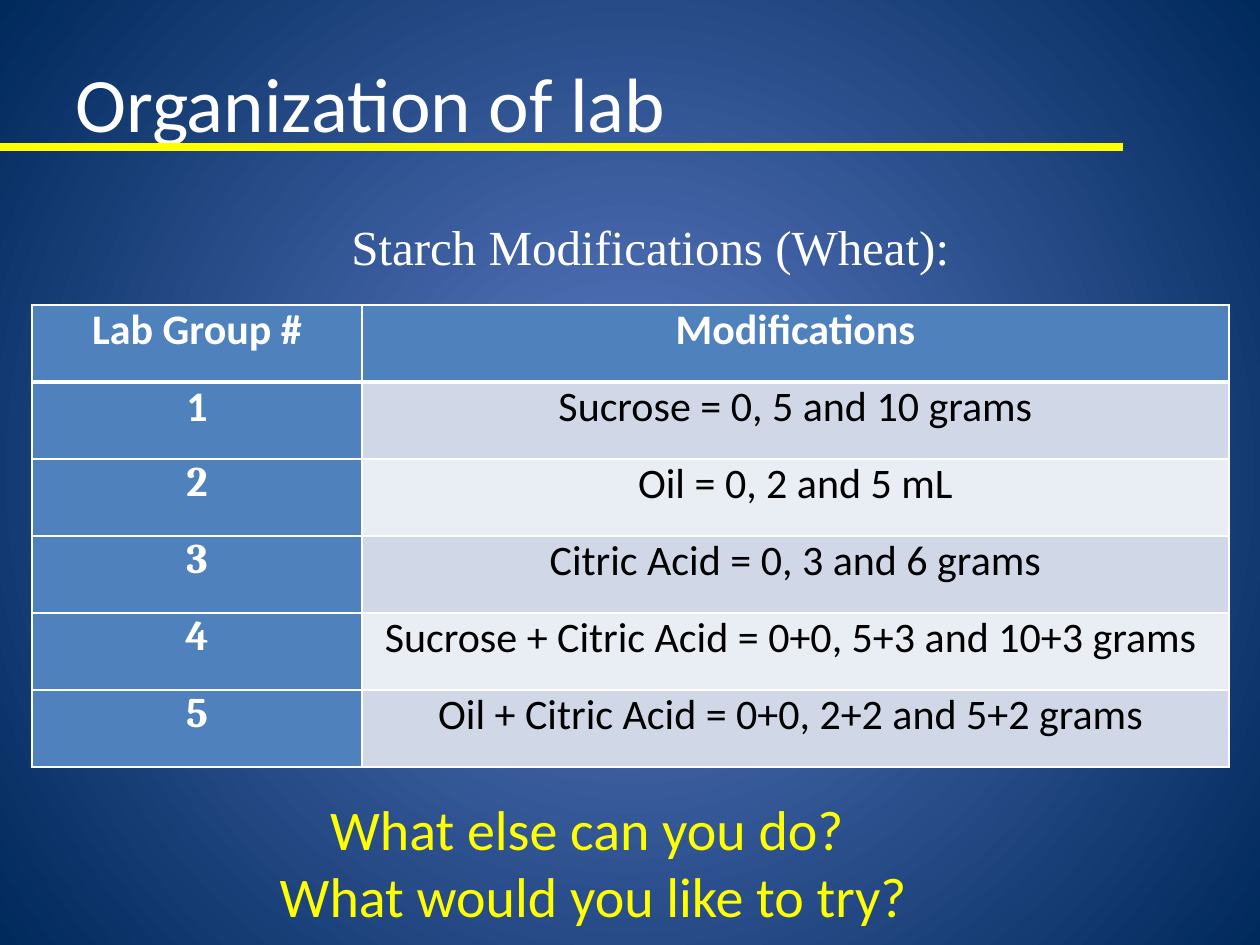
import pptx
import pptx.util
import pptx.dml.color
import pptx.enum.text
import pptx.enum.shapes
import pptx.oxml
import pptx.oxml.ns
import lxml.etree

HUES = {
    "white": "FFFFFF", "black": "000000", "yellow": "FFFF00",
    "glow": "5E7CC5", "navy": "00295C",
    "head": "4F81BD", "odd": "D0D8E8", "even": "E9EDF4",
}
ROWS = [
    ("Lab Group #", "Modifications"),
    ("1", "Sucrose = 0, 5 and 10 grams"),
    ("2", "Oil = 0, 2 and 5 mL"),
    ("3", "Citric Acid = 0, 3 and 6 grams"),
    ("4", "Sucrose + Citric Acid = 0+0, 5+3 and 10+3 grams "),
    ("5", "Oil + Citric Acid = 0+0, 2+2 and 5+2 grams "),
]
ALIGN = pptx.enum.text.PP_ALIGN
ANCHOR = pptx.enum.text.MSO_ANCHOR


def px(n):
    return pptx.util.Emu(round(n * 914400 / 126))


def rgb(name):
    return pptx.dml.color.RGBColor.from_string(HUES[name])


def write(frame, text, size=24, font="Calibri", hue="white", bold=False,
          align=ALIGN.CENTER):
    for i, line in enumerate(text.split("\n")):
        para = frame.paragraphs[0] if i == 0 else frame.add_paragraph()
        para.alignment = align
        run = para.add_run()
        run.text = line
        run.font.size = pptx.util.Pt(size)
        run.font.name = font
        run.font.bold = bold
        run.font.color.rgb = rgb(hue)


def label(slide, box, text, anchor=ANCHOR.MIDDLE, wrap=False, **style):
    frame = slide.shapes.add_textbox(*map(px, box)).text_frame
    frame.word_wrap = wrap
    frame.vertical_anchor = anchor
    write(frame, text, **style)


def backdrop(slide):
    fill = slide.background.fill
    fill.gradient()
    for stop, hue, place in zip(fill.gradient_stops, ("glow", "navy"), (0, 1)):
        stop.color.rgb = rgb(hue)
        stop.position = place
    space = pptx.oxml.ns.nsdecls("a")
    lin = slide.element.find(".//" + pptx.oxml.ns.qn("a:lin"))
    lin.getparent().replace(lin, pptx.oxml.parse_xml(
        f'<a:path {space} path="circle"><a:fillToRect l="50000" t="50000"'
        ' r="50000" b="50000"/></a:path>'))


def header(slide, box):
    left, top, width, height = box
    label(slide, box, "Organization of lab", wrap=True, size=44,
          align=ALIGN.LEFT)
    rule = slide.shapes.add_connector(
        pptx.enum.shapes.MSO_CONNECTOR.STRAIGHT,
        px(left - 63), px(top + 124), px(left + 1060), px(top + 124))
    rule.line.color.rgb = rgb("yellow")
    rule.line.width = pptx.util.Pt(4.5)
    lxml.etree.SubElement(rule._element.spPr, pptx.oxml.ns.qn("a:effectLst"))


def border(cell, **sides):
    props = cell._tc.get_or_add_tcPr()
    space = pptx.oxml.ns.nsdecls("a")
    for i, side in enumerate("LRTB"):
        wide = pptx.util.Pt(sides.get(side, 1))
        props.insert(i, pptx.oxml.parse_xml(
            f'<a:ln{side} {space} w="{wide}"><a:solidFill><a:srgbClr '
            f'val="{HUES["white"]}"/></a:solidFill></a:ln{side}>'))


def groups(slide, box):
    grid = slide.shapes.add_table(len(ROWS), 2, *map(px, box)).table
    first = 330
    grid.columns[0].width = px(first)
    grid.columns[1].width = px(box[2] - first)
    for r, row in enumerate(ROWS):
        grid.rows[r].height = px(box[3] / len(ROWS))
        for c, text in enumerate(row):
            cell = grid.cell(r, c)
            lead = r == 0 or c == 0
            cell.margin_left = cell.margin_right = px(9)
            cell.margin_top = cell.margin_bottom = 0
            cell.fill.solid()
            cell.fill.fore_color.rgb = rgb(
                "head" if lead else "odd" if r % 2 else "even")
            border(cell, T=3 if r == 1 else 1, B=3 if r == 0 else 1)
            write(cell.text_frame, text, bold=lead,
                  hue="white" if lead else "black",
                  font="Cambria" if c == 0 and r > 1 else "Calibri")


def main():
    deck = pptx.Presentation()
    deck.slide_width, deck.slide_height = px(1260), px(945)
    slide = deck.slides.add_slide(deck.slide_layouts[6])
    backdrop(slide)
    header(slide, (63, 23, 1134, 158))
    label(slide, (336, 210, 641, 72), "Starch Modifications (Wheat): ",
          size=28, font="Times New Roman")
    groups(slide, (32, 305, 1197, 462))
    label(slide, (262, 788, 663, 149),
          "What else can you do? \nWhat would you like to try?",
          anchor=ANCHOR.TOP, size=32, hue="yellow")
    deck.save("out.pptx")


if __name__ == "__main__":
    main()
